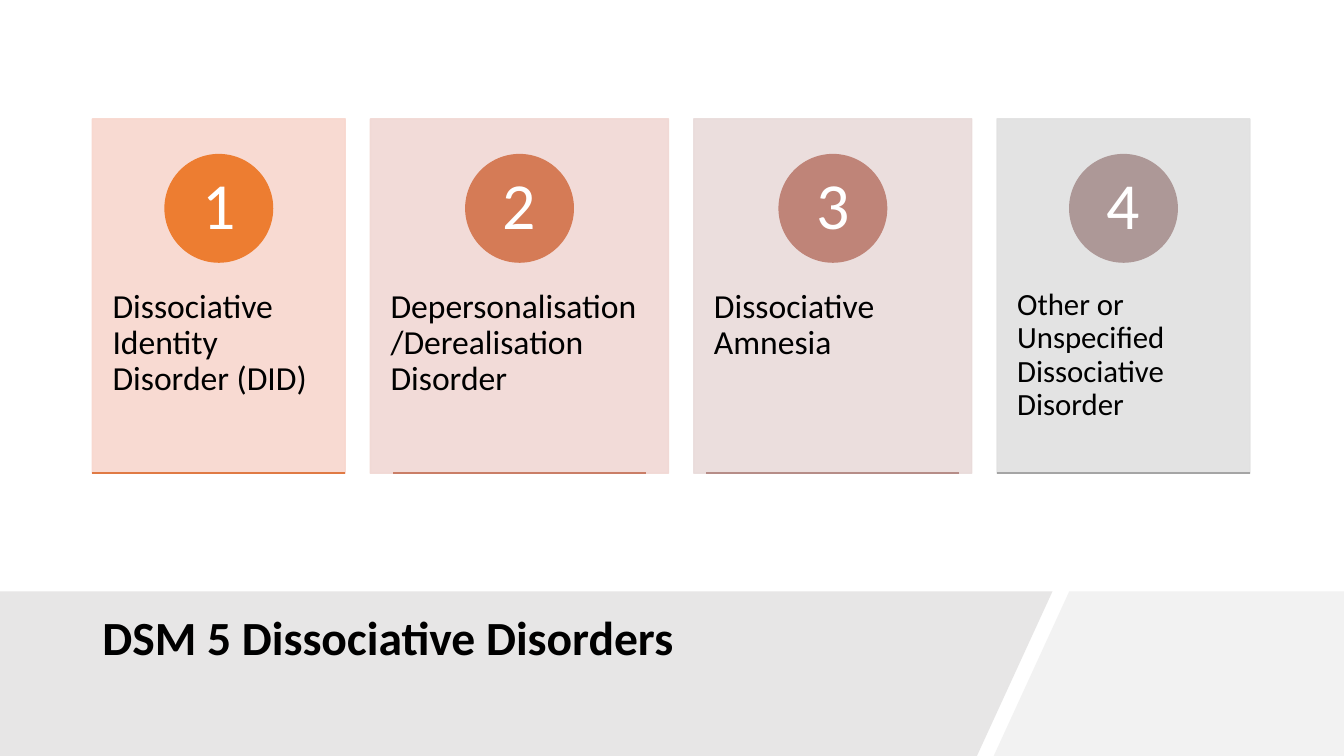
from dataclasses import dataclass

from lxml.etree import SubElement
from pptx import Presentation
from pptx.dml.color import RGBColor
from pptx.enum.shapes import MSO_CONNECTOR, MSO_SHAPE
from pptx.enum.text import MSO_ANCHOR, PP_ALIGN
from pptx.oxml.ns import qn
from pptx.util import Inches, Pt


@dataclass(frozen=True)
class Theme:
    """Colours, font and type sizes of the slide."""
    font: str = "Calibri"
    ink: str = "000000"
    numeral: str = "FFFFFF"
    band: str = "E7E6E6"
    wedge: str = "F2F2F2"
    title_size: int = 34
    numeral_size: int = 47
    hairline: int = 1
    card_opacity: int = 90


class Deck:
    """Draws on one slide, measured in a grid of 160 columns by 90 rows."""

    def __init__(self, presentation, theme):
        """Set the slide size and open a title-only slide."""
        self.theme = theme
        presentation.slide_width = Inches(13.333)
        presentation.slide_height = Inches(7.5)
        self.column = presentation.slide_width / 160
        self.row = presentation.slide_height / 90
        self.slide = presentation.slides.add_slide(presentation.slide_layouts[5])
        self.shapes = self.slide.shapes

    def place(self, *lengths):
        """Turn alternating column and row counts into slide lengths."""
        return [round(length * (self.row if index % 2 else self.column))
                for index, length in enumerate(lengths)]

    def paint(self, shape, color, opacity=100):
        """Give a shape a matching fill and outline without shadow."""
        shape.shadow.inherit = False
        shape.line.width = Pt(self.theme.hairline)
        for surface in (shape.fill, shape.line.fill):
            surface.solid()
            surface.fore_color.rgb = RGBColor.from_string(color)
        if opacity < 100:
            for tint in shape._element.spPr.iter(qn("a:srgbClr")):
                SubElement(tint, qn("a:alpha"), val=str(opacity * 1000))

    def set_text(self, shape, text, size, color, insets, anchor=MSO_ANCHOR.TOP,
                 align=PP_ALIGN.LEFT, bold=False):
        """Set and format the text of a shape."""
        frame = shape.text_frame
        frame.text = text
        frame.word_wrap = True
        frame.vertical_anchor = anchor
        (frame.margin_left, frame.margin_top,
         frame.margin_right, frame.margin_bottom) = map(Inches, insets)
        paragraph = frame.paragraphs[0]
        paragraph.alignment = align
        paragraph.line_spacing = 0.9
        font = paragraph.runs[0].font
        font.name, font.size, font.bold = self.theme.font, Pt(size), bold
        font.color.rgb = RGBColor.from_string(color)

    def panel(self, corners, color):
        """Draw a filled outline through grid points."""
        start, *others = [self.place(*corner) for corner in corners]
        builder = self.shapes.build_freeform(*start, scale=1.0)
        builder.add_line_segments(others, close=True)
        outline = builder.convert_to_shape()
        self.paint(outline, color)
        outline.line.fill.background()

    def title(self, text, *box):
        """Place the title above everything drawn so far."""
        heading = self.shapes.title
        heading.left, heading.top, heading.width, heading.height = self.place(*box)
        self.set_text(heading, text, self.theme.title_size, self.theme.ink,
                      (0.1, 0.05, 0.1, 0.65), MSO_ANCHOR.MIDDLE, bold=True)
        heading._element.getparent().append(heading._element)

    def card(self, *box, color):
        """Draw a translucent card."""
        self.paint(self.shapes.add_shape(MSO_SHAPE.RECTANGLE, *self.place(*box)),
                   color, self.theme.card_opacity)

    def label(self, text, *box, size):
        """Add the name of a disorder."""
        self.set_text(self.shapes.add_textbox(*self.place(*box)), text, size,
                      self.theme.ink, (0.2, 0.36, 0.2, 0.36))

    def badge(self, number, *box, color):
        """Draw a numbered circle."""
        circle = self.shapes.add_shape(MSO_SHAPE.OVAL, *self.place(*box))
        self.paint(circle, color)
        self.set_text(circle, str(number), self.theme.numeral_size, self.theme.numeral,
                      (0.08, 0.01, 0.08, 0.01), MSO_ANCHOR.MIDDLE, PP_ALIGN.CENTER)

    def rule(self, *ends, color):
        """Draw a thin line."""
        line = self.shapes.add_connector(MSO_CONNECTOR.STRAIGHT, *self.place(*ends))
        line.line.width = Pt(self.theme.hairline)
        line.line.color.rgb = RGBColor.from_string(color)
        SubElement(line._element.spPr, qn("a:effectLst"))


DISORDERS = [
    ("Dissociative Identity Disorder (DID)", 30.1, 24, "F8D7CE", "ED7D31", "E07A44"),
    ("Depersonalisation/Derealisation Disorder", 35.5, 24, "F1D8D4", "D57B56", "CA7E67"),
    ("Dissociative Amnesia", 33.1, 24, "E9DBDA", "BF8478", "B68D88"),
    ("Other or Unspecified Dissociative Disorder", 30.1, 22, "E1E1E1", "AD9897", "A5A5A5"),
]
MARGIN, GAP, BADGE, RULE = 11, 3, 12.8, 30.1
BAND_TOP, BOTTOM = 70.4, 90


def main():
    """Build the slide and save it."""
    presentation = Presentation()
    theme = Theme()
    deck = Deck(presentation, theme)
    deck.panel([(127.3, BAND_TOP), (160, BAND_TOP), (160, BOTTOM), (118.3, BOTTOM)],
               theme.wedge)
    deck.panel([(0, BAND_TOP), (125.3, BAND_TOP), (116.3, BOTTOM), (0, BOTTOM)],
               theme.band)
    deck.title("DSM 5 Dissociative Disorders", MARGIN, 72.6, 106, 14.4)
    left = MARGIN
    for number, (name, width, size, card, badge, rule) in enumerate(DISORDERS, 1):
        center = left + width / 2
        deck.card(left, 14.15, width, 42.2, color=card)
        deck.label(name, left, 30.1, width, 25.3, size=size)
        deck.badge(number, center - BADGE / 2, 18.4, BADGE, BADGE, color=badge)
        deck.rule(center - RULE / 2, 56.3, center + RULE / 2, 56.3, color=rule)
        left += width + GAP
    presentation.save("out.pptx")


if __name__ == "__main__":
    main()
